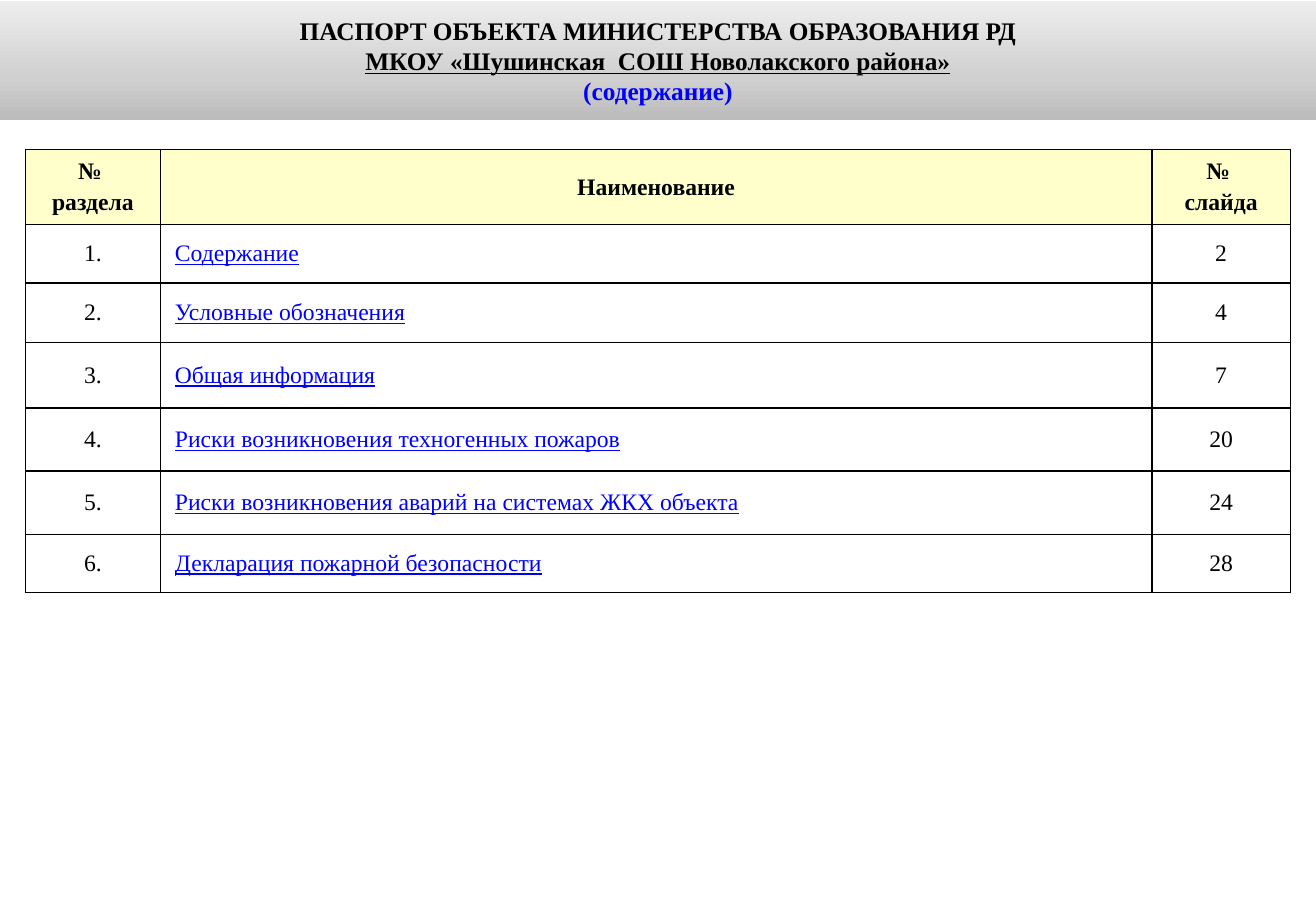
from copy import deepcopy
from dataclasses import dataclass
from lxml.etree import SubElement as Sub
from pptx import Presentation
from pptx.dml.color import RGBColor as RGB
from pptx.enum.text import MSO_ANCHOR as Anchor, MSO_AUTO_SIZE as Fit, PP_ALIGN as Align
from pptx.oxml.ns import qn
from pptx.util import Inches, Pt


@dataclass(frozen=True)
class Theme:
    """Hold the colours, font and sizes of the slide."""
    font: str = "Times New Roman"
    ink: str = "000000"
    link: str = "0000FF"
    head: str = "FFFFCC"
    cell: str = "FFFFFF"
    band: tuple = ((0, "BCBCBC"), (0.35, "D0D0D0"), (1, "EDEDED"))
    title: float = 15
    body: float = 14
    line: float = 1


LOOK = Theme()
WIDE, HIGH = 10.83, 7.5
COLS = (1.11, 8.16, 1.14)
ROWS = (0.62, 0.48, 0.49, 0.54, 0.52, 0.52, 0.48)
HEADS = (("№ ", "раздела"), ("Наименование",), ("№ ", "слайда"))
ITEMS = (
    ("Содержание", 2),
    ("Условные обозначения", 4),
    ("Общая информация", 7),
    ("Риски возникновения техногенных пожаров", 20),
    ("Риски возникновения аварий на системах ЖКХ объекта", 24),
    ("Декларация пожарной безопасности", 28),
)


def write(par, text, size=LOOK.body, color=LOOK.ink, bold=False, under=False,
          align=Align.CENTER, gap=0):
    """Put one formatted run into a paragraph."""
    par.alignment, par.space_before = align, Pt(gap)
    run = par.add_run()
    run.text = text
    font = run.font
    font.name, font.size, font.bold, font.underline = LOOK.font, Pt(size), bold, under
    font.color.rgb = RGB.from_string(color)


def fill_text(frame, lines, **form):
    """Write each line as a paragraph of the frame."""
    for i, line in enumerate(lines):
        write(frame.add_paragraph() if i else frame.paragraphs[0], line, **form)


def shade(shape):
    """Give the shape the three-stop grey gradient."""
    fill = shape.fill
    fill.gradient()
    stops = shape.element.spPr.find(".//" + qn("a:gsLst"))
    stops.append(deepcopy(stops[-1]))
    for stop, (pos, color) in zip(fill.gradient_stops, LOOK.band):
        stop.position, stop.color.rgb = pos, RGB.from_string(color)
    fill.gradient_angle = 90


def rule(cell):
    """Draw a line on all four sides of a cell."""
    props = cell._tc.get_or_add_tcPr()
    for side in "LRTB":
        line = Sub(props, qn("a:ln" + side), w=str(Pt(LOOK.line)))
        Sub(Sub(line, qn("a:solidFill")), qn("a:srgbClr"), val=LOOK.ink)


def style(cell, color):
    """Set borders, fill and margins of a cell."""
    rule(cell)
    cell.fill.solid()
    cell.fill.fore_color.rgb = RGB.from_string(color)
    cell.vertical_anchor = Anchor.MIDDLE
    cell.margin_left = cell.margin_right = Inches(0.12)
    cell.margin_top = cell.margin_bottom = Inches(0.05)


def banner(slide, x, y, w, h):
    """Place the title band in its box."""
    shape = slide.shapes.title
    shape.left, shape.top, shape.width, shape.height = map(Inches, (x, y, w, h))
    shade(shape)
    frame = shape.text_frame
    frame.auto_size, frame.word_wrap = Fit.NONE, True
    frame.vertical_anchor = Anchor.MIDDLE
    form = dict(size=LOOK.title, bold=True)
    write(frame.paragraphs[0], "ПАСПОРТ ОБЪЕКТА МИНИСТЕРСТВА ОБРАЗОВАНИЯ РД", **form)
    write(frame.add_paragraph(), "МКОУ «Шушинская  СОШ Новолакского района»",
          under=True, **form)
    write(frame.add_paragraph(), "(содержание)", color=LOOK.link, **form)


def contents(slide, x, y, w, h):
    """Place the table of contents in its box."""
    table = slide.shapes.add_table(len(ROWS), len(COLS), *map(Inches, (x, y, w, h))).table
    table.first_row = table.horz_banding = False
    for col, share in zip(table.columns, COLS):
        col.width = Inches(w * share / sum(COLS))
    for row, share in zip(table.rows, ROWS):
        row.height = Inches(h * share / sum(ROWS))
    for c, lines in enumerate(HEADS):
        cell = table.cell(0, c)
        style(cell, LOOK.head)
        fill_text(cell.text_frame, lines, bold=True, gap=LOOK.body * 0.2)
    link = dict(color=LOOK.link, under=True, align=Align.LEFT)
    for r, (name, page) in enumerate(ITEMS, 1):
        parts = ((f"{r}.", {}), (name, link), (str(page), {}))
        for c, (text, form) in enumerate(parts):
            cell = table.cell(r, c)
            style(cell, LOOK.cell)
            fill_text(cell.text_frame, [text], **form)


def main():
    """Build and save the slide."""
    deck = Presentation()
    deck.slide_width, deck.slide_height = Inches(WIDE), Inches(HIGH)
    slide = deck.slides.add_slide(deck.slide_layouts[5])
    banner(slide, 0, 0.01, WIDE, HIGH * 0.13)
    contents(slide, 0.21, 1.23, sum(COLS), sum(ROWS))
    deck.save("out.pptx")


if __name__ == "__main__":
    main()
